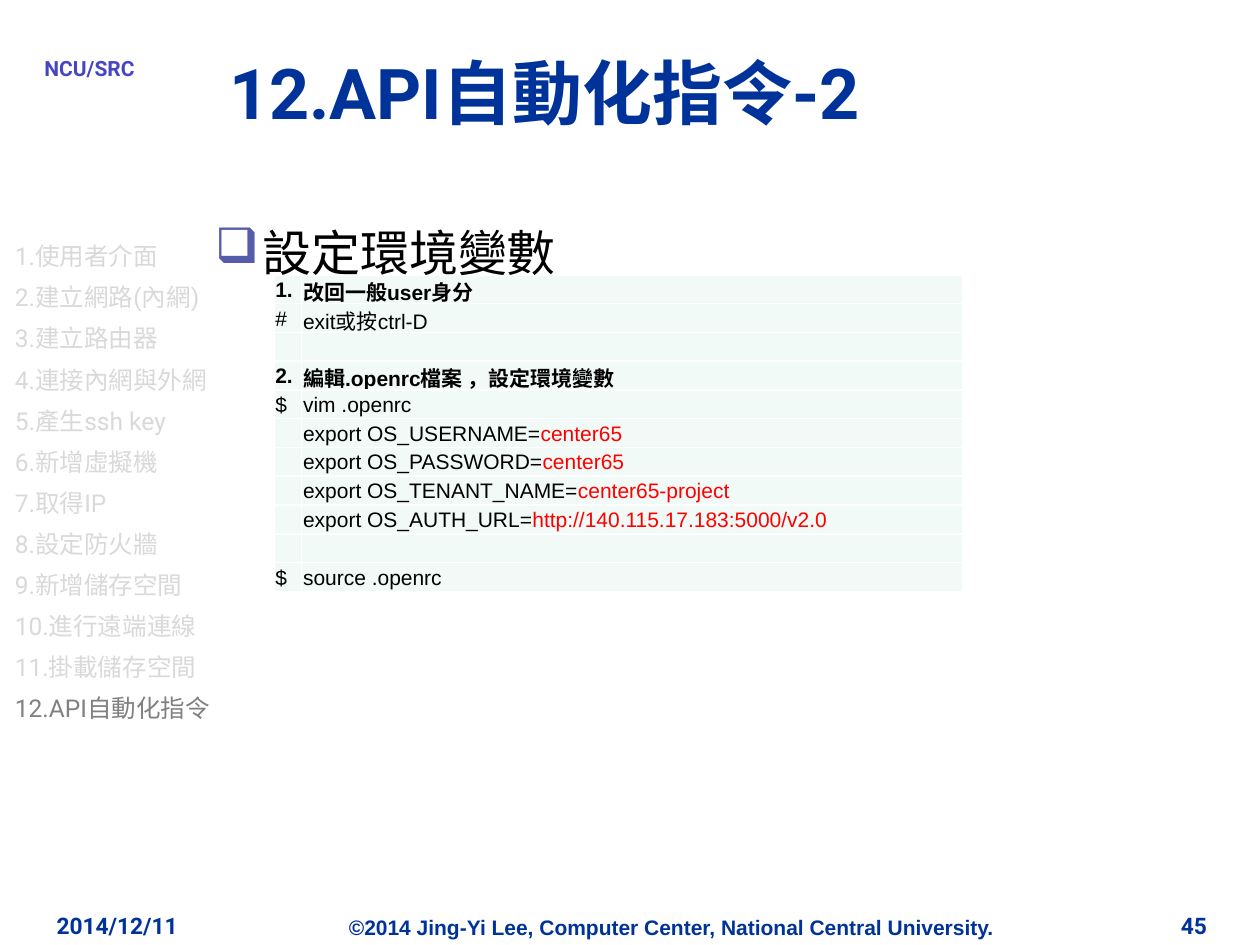
from dataclasses import dataclass

from lxml import etree
from pptx import Presentation
from pptx.dml.color import RGBColor
from pptx.enum.text import MSO_ANCHOR, PP_ALIGN
from pptx.oxml.ns import qn
from pptx.slide import Slide
from pptx.table import _Cell
from pptx.text.text import TextFrame, _Paragraph
from pptx.util import Cm, Pt

LEFT, CENTER, RIGHT = PP_ALIGN.LEFT, PP_ALIGN.CENTER, PP_ALIGN.RIGHT
TOP, MIDDLE = MSO_ANCHOR.TOP, MSO_ANCHOR.MIDDLE

COLORS = {
    "navy": "003399",
    "violet": "4646C2",
    "bullet": "555DAB",
    "faded": "D9D9D9",
    "current": "808080",
    "black": "000000",
    "red": "FF0000",
    "mint": "F1FAF6",
    "white": "FFFFFF",
}


@dataclass(frozen=True)
class Style:
    size: float
    color: str
    bold: bool = False
    font: str = "Roboto"


@dataclass(frozen=True)
class Label:
    text: str
    box: tuple[float, float, float, float]
    style: Style
    alignment: PP_ALIGN = LEFT
    anchor: MSO_ANCHOR = TOP
    padded: bool = True
    wrap: bool = True


@dataclass(frozen=True)
class CommandRow:
    prompt: str = ""
    command: str = ""
    value: str = ""
    bold: bool = False


FOOTER_STYLE = Style(13, "navy", True)
LABELS = [
    Label("©2014 Jing-Yi Lee, Computer Center, National Central University.",
          (4.37, 18.44, 18.34, 0.76), Style(12, "navy", True, "Arial"), CENTER, padded=False),
    Label("NCU/SRC", (0.89, 1.12, 1.83, 0.61), Style(12, "violet", True), CENTER,
          padded=False, wrap=False),
    Label("12.API自動化指令-2", (4.37, 0.71, 20.98, 2.29), Style(40, "navy", True), anchor=MIDDLE),
    Label("2014/12/11", (0.89, 18.26, 5.28, 1.27), FOOTER_STYLE),
    Label("45", (19.3, 18.26, 5.28, 1.27), FOOTER_STYLE, RIGHT),
]
STEPS = [
    "使用者介面", "建立網路(內網)", "建立路由器", "連接內網與外網", "產生ssh key", "新增虛擬機",
    "取得IP", "設定防火牆", "新增儲存空間", "進行遠端連線", "掛載儲存空間", "API自動化指令",
]
CURRENT_STEP = 12
COMMANDS = [
    CommandRow("1.", "改回一般user身分", bold=True),
    CommandRow("#", "exit或按ctrl-D"),
    CommandRow(),
    CommandRow("2.", "編輯.openrc檔案 ，設定環境變數", bold=True),
    CommandRow("$", "vim .openrc"),
    CommandRow("", "export OS_USERNAME=", "center65"),
    CommandRow("", "export OS_PASSWORD=", "center65"),
    CommandRow("", "export OS_TENANT_NAME=", "center65-project"),
    CommandRow("", "export OS_AUTH_URL=", "http://140.115.17.183:5000/v2.0"),
    CommandRow(),
    CommandRow("$", "source .openrc"),
]
COLUMN_WIDTHS = (0.56, 13.33)
ROW_HEIGHT = 0.58


def add_run(paragraph: _Paragraph, text: str, style: Style) -> None:
    run = paragraph.add_run()
    run.text = text
    run.font.name = style.font
    run.font.size = Pt(style.size)
    run.font.bold = style.bold
    run.font.color.rgb = RGBColor.from_string(COLORS[style.color])


def add_text_frame(slide: Slide, box: tuple[float, float, float, float],
                   padded: bool = True, wrap: bool = True) -> TextFrame:
    frame = slide.shapes.add_textbox(*map(Cm, box)).text_frame
    frame.word_wrap = wrap
    frame.margin_left = frame.margin_right = Cm(0.25 if padded else 0)
    frame.margin_top = frame.margin_bottom = Cm(0.13 if padded else 0)
    return frame


def add_label(slide: Slide, label: Label) -> None:
    frame = add_text_frame(slide, label.box, label.padded, label.wrap)
    frame.vertical_anchor = label.anchor
    paragraph = frame.paragraphs[0]
    paragraph.alignment = label.alignment
    add_run(paragraph, label.text, label.style)


def add_step_list(slide: Slide) -> None:
    frame = add_text_frame(slide, (0.05, 4.62, 21.59, 13.31))
    for number, step in enumerate(STEPS, start=1):
        paragraph = frame.paragraphs[0] if number == 1 else frame.add_paragraph()
        paragraph.line_spacing = 1.2
        if number > 1:
            paragraph.space_before = Pt(3.3)
        color = "current" if number == CURRENT_STEP else "faded"
        add_run(paragraph, f"{number}.{step}", Style(14, color))


def add_bullet_heading(slide: Slide) -> None:
    paragraph = add_text_frame(slide, (4.09, 4.11, 20.8, 12.8)).paragraphs[0]
    paragraph.line_spacing = 1.2
    properties = paragraph._p.get_or_add_pPr()
    properties.set("marL", str(Cm(0.95)))
    properties.set("indent", str(Cm(-0.95)))
    bullet_color = etree.SubElement(properties, qn("a:buClr"))
    etree.SubElement(bullet_color, qn("a:srgbClr"), val=COLORS["bullet"])
    etree.SubElement(properties, qn("a:buChar"), char="❑")
    add_run(paragraph, "設定環境變數", Style(28, "black"))


def format_cell(cell: _Cell) -> None:
    cell.margin_left = cell.margin_right = cell.margin_top = Cm(0.03)
    cell.margin_bottom = Cm(0)
    cell.vertical_anchor = MIDDLE
    properties = cell._tc.get_or_add_tcPr()
    for side in ("lnL", "lnR", "lnT", "lnB"):
        line = etree.SubElement(properties, qn(f"a:{side}"), w=str(Pt(1)))
        fill = etree.SubElement(line, qn("a:solidFill"))
        etree.SubElement(fill, qn("a:srgbClr"), val=COLORS["white"])
    cell.fill.solid()
    cell.fill.fore_color.rgb = RGBColor.from_string(COLORS["mint"])


def fill_cell(cell: _Cell, parts: list[tuple[str, str]], bold: bool) -> None:
    format_cell(cell)
    paragraph = cell.text_frame.paragraphs[0]
    for text, color in parts:
        if text:
            add_run(paragraph, text, Style(12, color, bold, "Arial"))
    etree.SubElement(paragraph._p, qn("a:endParaRPr"), sz="1200")


def add_command_table(slide: Slide) -> None:
    table = slide.shapes.add_table(
        len(COMMANDS), len(COLUMN_WIDTHS), Cm(5.52), Cm(5.54),
        Cm(sum(COLUMN_WIDTHS)), Cm(ROW_HEIGHT * len(COMMANDS))).table
    table.first_row = table.horz_banding = False
    for column, width in zip(table.columns, COLUMN_WIDTHS):
        column.width = Cm(width)
    for index, row in enumerate(COMMANDS):
        table.rows[index].height = Cm(ROW_HEIGHT)
        fill_cell(table.cell(index, 0), [(row.prompt, "black")], row.bold)
        fill_cell(table.cell(index, 1), [(row.command, "black"), (row.value, "red")], row.bold)


def main() -> None:
    presentation = Presentation()
    presentation.slide_width = Cm(25.4)
    presentation.slide_height = Cm(19.05)
    slide = presentation.slides.add_slide(presentation.slide_layouts[6])
    add_step_list(slide)
    add_command_table(slide)
    add_bullet_heading(slide)
    for label in LABELS:
        add_label(slide, label)
    presentation.save("out.pptx")


if __name__ == "__main__":
    main()
